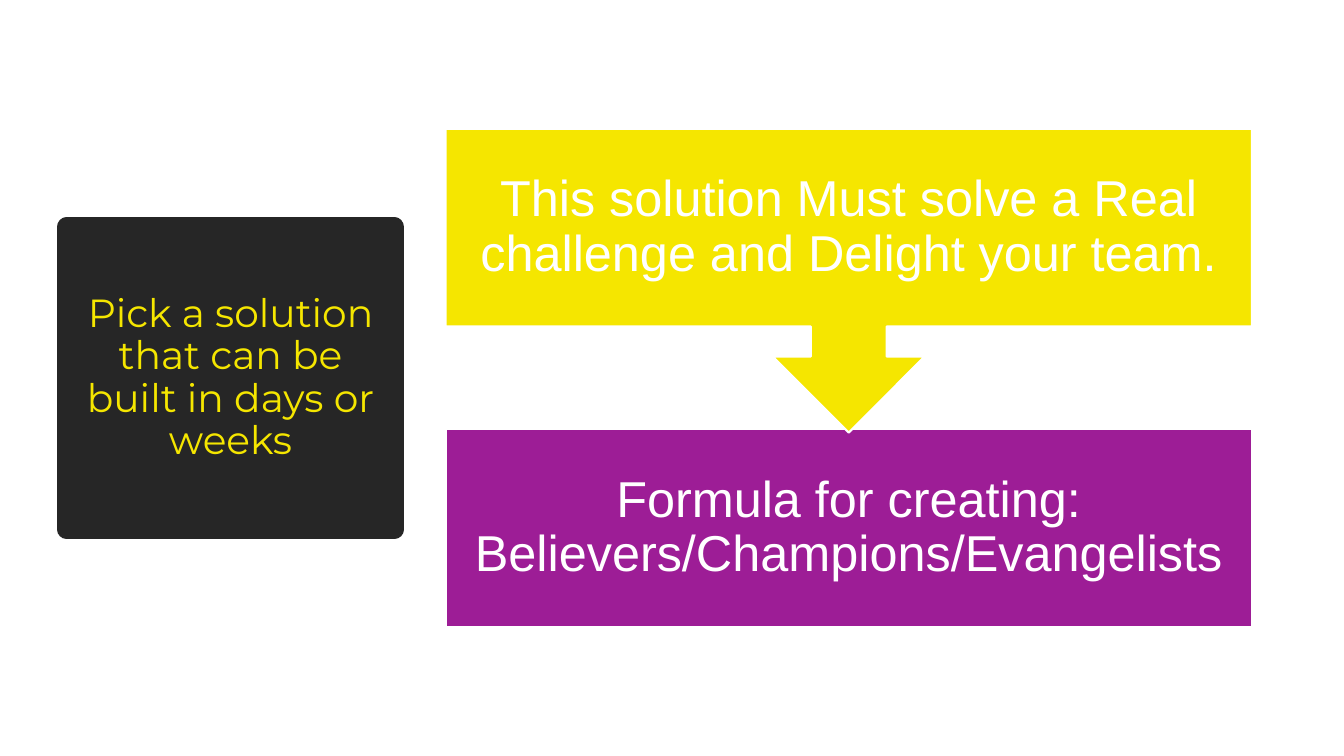
from dataclasses import dataclass

from lxml import etree
from pptx import Presentation
from pptx import util as u
from pptx.dml.color import RGBColor
from pptx.enum import shapes, text
from pptx.oxml import ns

WHITE = RGBColor(0xFF, 0xFF, 0xFF)
CHARCOAL = RGBColor(0x26, 0x26, 0x26)
YELLOW = RGBColor(0xF5, 0xE6, 0x00)
PURPLE = RGBColor(0x9D, 0x1D, 0x96)

STEP_LEFT, STEP_WIDTH, STEP_HEIGHT = 11.23, 20.32, 4.98
CALLOUT_HEIGHT = 7.65
MARGINS = ("margin_left", "margin_top", "margin_right", "margin_bottom")


@dataclass(frozen=True)
class Panel:
    wording: str
    kind: shapes.MSO_SHAPE
    left: float
    top: float
    width: float
    height: float
    fill: RGBColor
    line: RGBColor = WHITE
    line_width: float = 1.5
    font_name: str = "Arial"
    font_size: float = 36
    font_color: RGBColor = WHITE
    margin: float = 0.7
    adjustments: tuple[float, ...] = ()


PANELS = (
    Panel("Pick a solution that can be built in days or weeks",
          shapes.MSO_SHAPE.RECTANGLE, 1.68, 5.72, 8.26, 7.62, CHARCOAL,
          line=CHARCOAL, line_width=13.75, font_name="Montserrat",
          font_size=28, font_color=YELLOW, margin=0.25),
    Panel("Formula for creating: Believers/Champions/Evangelists",
          shapes.MSO_SHAPE.RECTANGLE,
          STEP_LEFT, 10.82, STEP_WIDTH, STEP_HEIGHT, PURPLE),
    Panel("This solution Must solve a Real challenge and Delight your team.",
          shapes.MSO_SHAPE.DOWN_ARROW_CALLOUT,
          STEP_LEFT, 3.25, STEP_WIDTH, CALLOUT_HEIGHT, YELLOW,
          adjustments=(0.25, 0.25, 0.25, STEP_HEIGHT / CALLOUT_HEIGHT)),
)


def apply_format(target: object, values: dict[str, object]) -> None:
    for name, value in values.items():
        setattr(target, name, value)


def draw_panel(slide, panel: Panel) -> None:
    bounds = (panel.left, panel.top, panel.width, panel.height)
    shape = slide.shapes.add_shape(panel.kind, *map(u.Cm, bounds))
    shape.shadow.inherit = False
    for index, value in enumerate(panel.adjustments):
        shape.adjustments[index] = value

    shape.fill.solid()
    shape.fill.fore_color.rgb = panel.fill
    shape.line.color.rgb = panel.line
    shape.line.width = u.Pt(panel.line_width)
    outline = shape.line._get_or_add_ln()
    etree.SubElement(outline, ns.qn("a:round"))

    frame = shape.text_frame
    apply_format(frame, {
        "word_wrap": True,
        "vertical_anchor": text.MSO_ANCHOR.MIDDLE,
        **dict.fromkeys(MARGINS, u.Cm(panel.margin)),
    })
    paragraph = frame.paragraphs[0]
    apply_format(paragraph, {
        "text": panel.wording,
        "alignment": text.PP_ALIGN.CENTER,
        "line_spacing": 0.9,
    })
    font = paragraph.runs[0].font
    apply_format(font, {
        "name": panel.font_name,
        "size": u.Pt(panel.font_size),
    })
    font.color.rgb = panel.font_color


def main() -> None:
    presentation = Presentation()
    apply_format(presentation, {
        "slide_width": u.Cm(33.87),
        "slide_height": u.Cm(19.05),
    })
    slide = presentation.slides.add_slide(presentation.slide_layouts[6])
    for panel in PANELS:
        draw_panel(slide, panel)
    presentation.save("out.pptx")


if __name__ == "__main__":
    main()
